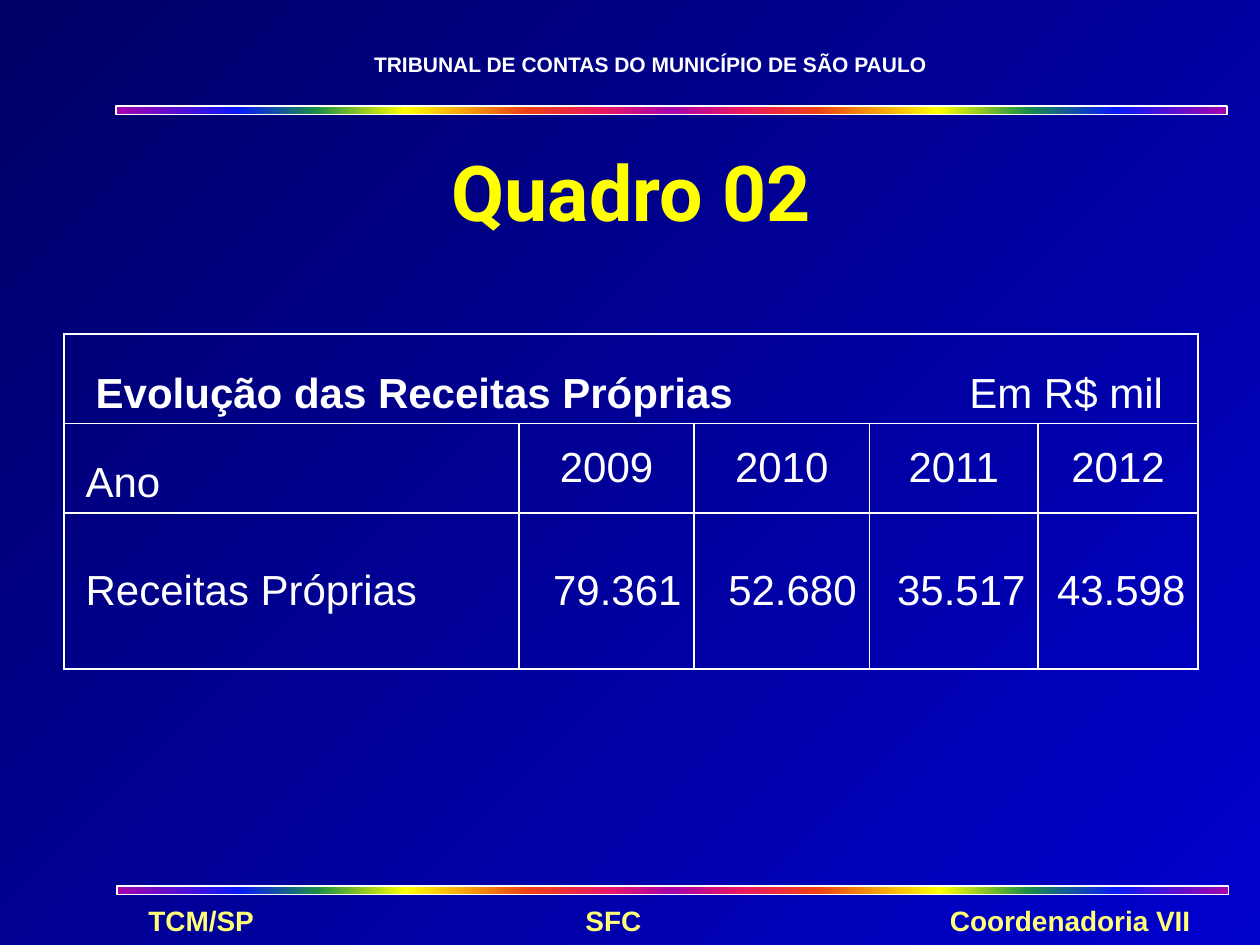
from lxml.etree import SubElement
from pptx import Presentation
from pptx.dml.color import RGBColor
from pptx.enum.shapes import MSO_SHAPE
from pptx.enum.text import MSO_ANCHOR as ANCHOR, PP_ALIGN as ALIGN
from pptx.oxml.ns import qn
from pptx.util import Inches, Pt

WHITE = RGBColor(0xFF, 0xFF, 0xFF)
YELLOW = RGBColor(0xFF, 0xFF, 0x00)
PALE_YELLOW = RGBColor(0xFF, 0xFF, 0x78)
NAVY = RGBColor(0x00, 0x00, 0x66)
BLUE = RGBColor(0x00, 0x00, 0xCC)
PURPLE = RGBColor(0xA6, 0x03, 0xAB)
BRIGHT_BLUE = RGBColor(0x08, 0x19, 0xFB)
GREEN = RGBColor(0x1A, 0x8D, 0x48)
ORANGE = RGBColor(0xEE, 0x3F, 0x17)
PINK = RGBColor(0xE8, 0x17, 0x66)

# The rainbow runs to the middle of the bar and back again
RAINBOW = [(0, PURPLE), (11, BRIGHT_BLUE), (18, GREEN), (26, YELLOW),
           (37, ORANGE), (44, PINK), (50, PURPLE), (56, PINK), (63, ORANGE),
           (74, YELLOW), (82, GREEN), (90, BRIGHT_BLUE), (100, PURPLE)]

COLS, ROWS = 100, 75  # slide grid in square cells
CELL = Inches(0.1)


def grid(*cells):
    """Turn counts of grid cells into lengths."""
    return [int(n * CELL) for n in cells]


def add_tabs(p, stops):
    """Add (grid position, alignment) tab stops to a paragraph."""
    tabs = SubElement(p._p.get_or_add_pPr(), qn("a:tabLst"))
    for pos, algn in stops:
        SubElement(tabs, qn("a:tab"), pos=str(int(pos * CELL)), algn=algn)


prs = Presentation()
prs.slide_width, prs.slide_height = grid(COLS, ROWS)
s = prs.slides.add_slide(prs.slide_layouts[6])

# Background
fill = s.background.fill
fill.gradient()
fill.gradient_angle = 315
for stop, pos, color in zip(fill.gradient_stops, (0, 1), (NAVY, BLUE)):
    stop.position = pos
    stop.color.rgb = color

# Rainbow bars
for left, top in ((9.2, 8.4), (9.3, 70.3)):
    sp = s.shapes.add_shape(MSO_SHAPE.RECTANGLE, *grid(left, top, 88.2, 0.7))
    sp.shadow.inherit = False
    sp.line.color.rgb = WHITE
    sp.line.width = Pt(1)
    sp.fill.gradient()
    sp.fill.gradient_angle = 0
    stops = sp._element.spPr.find(".//" + qn("a:gsLst"))
    stops.clear()
    for pos, color in RAINBOW:
        gs = SubElement(stops, qn("a:gs"), pos=str(pos * 1000))
        SubElement(gs, qn("a:srgbClr"), val=str(color))

# Header, title and footer
texts = [
    ("TRIBUNAL DE CONTAS DO MUNICÍPIO DE SÃO PAULO", (28.7, 3.6, 62.2, 5),
     ANCHOR.TOP, ALIGN.LEFT, "Arial", 12, WHITE, []),
    ("Quadro 02", (5.1, 10, 90, 10.2),
     ANCHOR.MIDDLE, ALIGN.CENTER, "Roboto", 44, YELLOW, []),
    ("TCM/SP\tSFC\tCoordenadoria VII", (10.8, 71.2, 86, 3.7),
     ANCHOR.TOP, ALIGN.LEFT, "Arial", 16, PALE_YELLOW,
     [(36.9, "ctr"), (82.7, "r")]),
]
for text, place, anchor, align, font, size, color, tabs in texts:
    tf = s.shapes.add_textbox(*grid(*place)).text_frame
    tf.word_wrap = True
    tf.vertical_anchor = anchor
    p = tf.paragraphs[0]
    p.text = text
    p.alignment = align
    if tabs:
        add_tabs(p, tabs)
    r = p.runs[0]
    r.font.name, r.font.size, r.font.bold = font, Pt(size), True
    r.font.color.rgb = color

# Revenue table
rows = [
    ["Evolução das Receitas Próprias", "", "", "", ""],
    ["Ano", "2009", "2010", "2011", "2012"],
    ["Receitas Próprias", "79.361", "52.680", "35.517", "43.598"],
]
col_widths = grid(36.1, 13.9, 13.9, 13.4, 12.7)
row_heights = grid(7.1, 7.1, 12.4)
table = s.shapes.add_table(len(rows), len(col_widths), *grid(5.1, 26.5),
                           sum(col_widths), sum(row_heights)).table
table.first_row = table.horz_banding = False
for col, width in zip(table.columns, col_widths):
    col.width = width
for row, height in zip(table.rows, row_heights):
    row.height = height
table.cell(0, 0).merge(table.cell(0, len(col_widths) - 1))

for i, row in enumerate(rows):
    for j, text in enumerate(row):
        cell = table.cell(i, j)
        tcPr = cell._tc.get_or_add_tcPr()
        for side in ("lnL", "lnR", "lnT", "lnB"):
            ln = SubElement(tcPr, qn("a:" + side), w=str(Pt(1)))
            color = SubElement(SubElement(ln, qn("a:solidFill")), qn("a:srgbClr"))
            color.set("val", str(WHITE))
        cell.fill.background()
        if not text:
            continue
        cell.vertical_anchor = ANCHOR.MIDDLE if j or i == 2 else ANCHOR.BOTTOM
        p = cell.text_frame.paragraphs[0]
        p.text = text
        if j:
            p.alignment = ALIGN.CENTER if i == 1 else ALIGN.RIGHT
        else:
            cell.margin_left = grid(1.7 if i else 2.5)[0]
        if i == 0:
            add_tabs(p, [(84.7, "r")])
            p.add_run().text = "\tEm R$ mil"
        for n, r in enumerate(p.runs):
            r.font.name, r.font.size = "Arial", Pt(24)
            r.font.bold = i == 0 and n == 0
            r.font.color.rgb = WHITE

prs.save("out.pptx")
